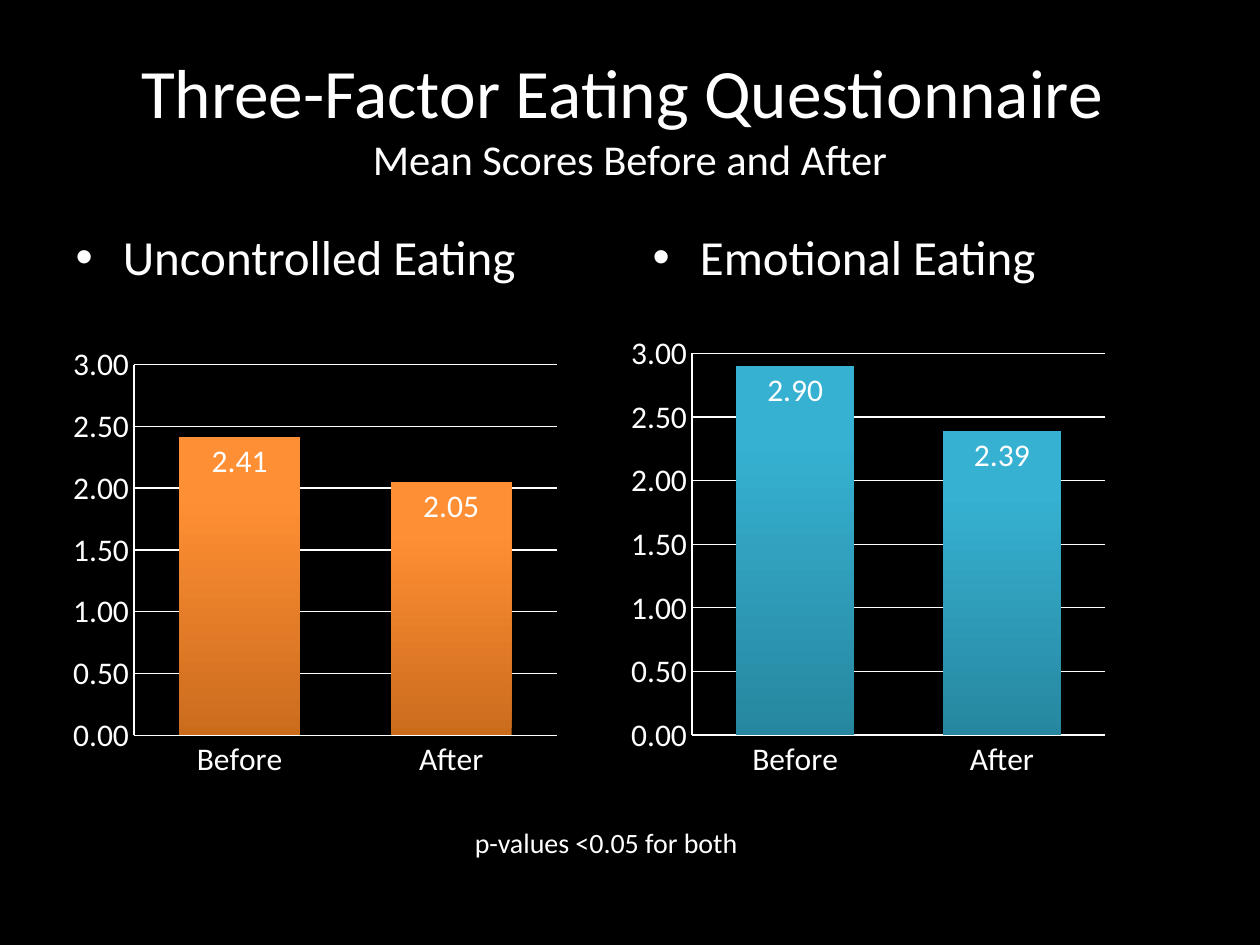
from dataclasses import dataclass

import pptx
import pptx.chart.data
import pptx.dml.color
import pptx.enum.chart
import pptx.enum.text
import pptx.util

WIDTH, HEIGHT = 10, 7.5
FONT = "Calibri"
COLORS = {
    "background": "000000",
    "text": "FFFFFF",
    "orange_dark": "CB6C1D",
    "orange": "FF8F34",
    "blue_dark": "2787A0",
    "blue": "36B1D2",
}


@dataclass(frozen=True)
class Area:
    """A rectangle in inches."""
    left: float
    top: float
    width: float
    height: float

    def lengths(self) -> tuple:
        return tuple(map(pptx.util.Inches,
                         (self.left, self.top, self.width, self.height)))


@dataclass(frozen=True)
class Scale:
    heading: str
    scores: tuple
    hue: str
    chart_area: Area


MARGIN = 0.05 * WIDTH
COLUMN_WIDTH = 4.42
TITLE_AREA = Area(MARGIN, 0.04 * HEIGHT, WIDTH - 2 * MARGIN, HEIGHT / 6)
NOTE_AREA = Area(3.67, 6.5, 2.58, 0.37)
SCALES = (
    Scale("Uncontrolled Eating", (2.41, 2.05), "orange",
          Area(MARGIN, 2.67, 4, 3.58)),
    Scale("Emotional Eating", (2.90, 2.39), "blue",
          Area(4.93, 2.58, 3.92, 3.67)),
)


def color(name: str) -> pptx.dml.color.RGBColor:
    return pptx.dml.color.RGBColor.from_string(COLORS[name])


def style_font(font, size: float) -> None:
    font.name = FONT
    font.size = pptx.util.Pt(size)
    font.color.rgb = color("text")


def write(box, area: Area, text: str, *sizes: float) -> None:
    """Place a box and give each run of its text one of the sizes."""
    box.left, box.top, box.width, box.height = area.lengths()
    box.text_frame.text = text
    box.text_frame.auto_size = pptx.enum.text.MSO_AUTO_SIZE.NONE
    for span, size in zip(box.text_frame.paragraphs[0].runs, sizes):
        style_font(span.font, size)


def style_line(line) -> None:
    line.color.rgb = color("text")
    line.width = pptx.util.Pt(0.75)


def draw_chart(page, scale: Scale) -> None:
    data = pptx.chart.data.CategoryChartData(number_format="0.00")
    data.categories = ("Before", "After")
    data.add_series("Series 1", scale.scores)
    chart = page.shapes.add_chart(
        pptx.enum.chart.XL_CHART_TYPE.COLUMN_CLUSTERED,
        *scale.chart_area.lengths(), data).chart
    chart.has_title = False
    chart.has_legend = False
    style_font(chart.font, 18)

    values = chart.value_axis
    values.minimum_scale, values.maximum_scale, values.major_unit = 0, 3, 0.5
    values.tick_labels.number_format = "0.00"
    values.tick_labels.number_format_is_linked = False
    style_line(values.major_gridlines.format.line)
    for axis in (values, chart.category_axis):
        axis.major_tick_mark = pptx.enum.chart.XL_TICK_MARK.NONE
        style_line(axis.format.line)

    plot = chart.plots[0]
    plot.vary_by_categories = False
    plot.gap_width, plot.overlap = 75, 40
    plot.has_data_labels = True
    labels = plot.data_labels
    labels.show_value = True
    labels.position = pptx.enum.chart.XL_LABEL_POSITION.INSIDE_END
    labels.number_format = "0.00"
    labels.number_format_is_linked = False
    style_font(labels.font, 18)

    fill = plot.series[0].format.fill
    fill.gradient()
    fill.gradient_angle = 90
    bottom, top = fill.gradient_stops
    bottom.color.rgb, bottom.position = color(scale.hue + "_dark"), 0
    top.color.rgb, top.position = color(scale.hue), 0.8


def main() -> None:
    deck = pptx.Presentation()
    deck.slide_width = pptx.util.Inches(WIDTH)
    deck.slide_height = pptx.util.Inches(HEIGHT)
    page = deck.slides.add_slide(deck.slide_layouts.get_by_name("Two Content"))
    page.background.fill.solid()
    page.background.fill.fore_color.rgb = color("background")

    title, *bodies = page.placeholders
    write(title, TITLE_AREA,
          "Three-Factor Eating Questionnaire \vMean Scores Before and After",
          39.6, 24.3)
    lefts = (MARGIN, WIDTH - MARGIN - COLUMN_WIDTH)
    for body, left, scale in zip(bodies, lefts, SCALES):
        write(body, Area(left, 1.75, COLUMN_WIDTH, 0.66 * HEIGHT),
              scale.heading, 28)
        draw_chart(page, scale)

    note = page.shapes.add_textbox(*NOTE_AREA.lengths())
    write(note, NOTE_AREA, "p-values <0.05 for both", 16)
    note.text_frame.word_wrap = True
    deck.save("out.pptx")


if __name__ == "__main__":
    main()
